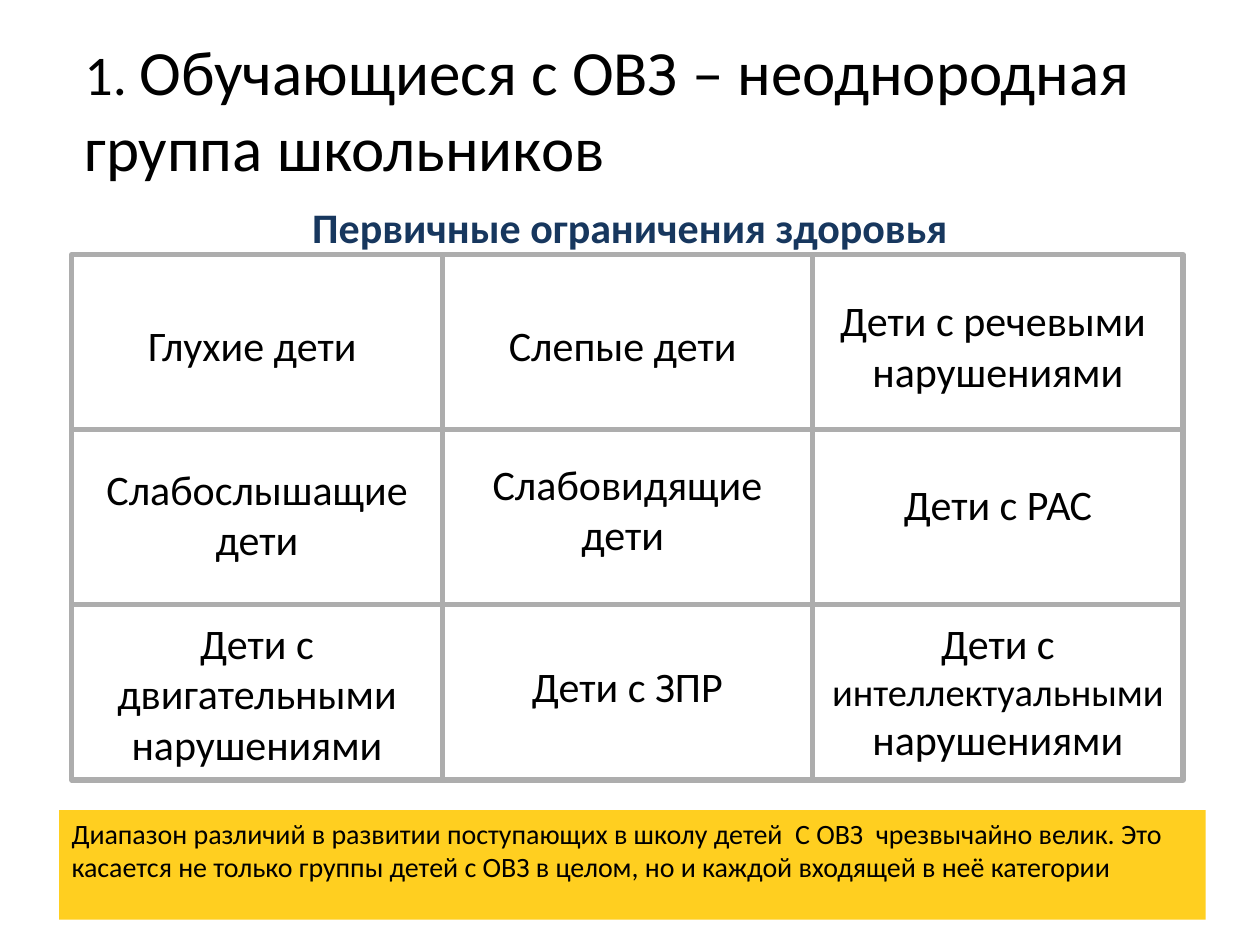
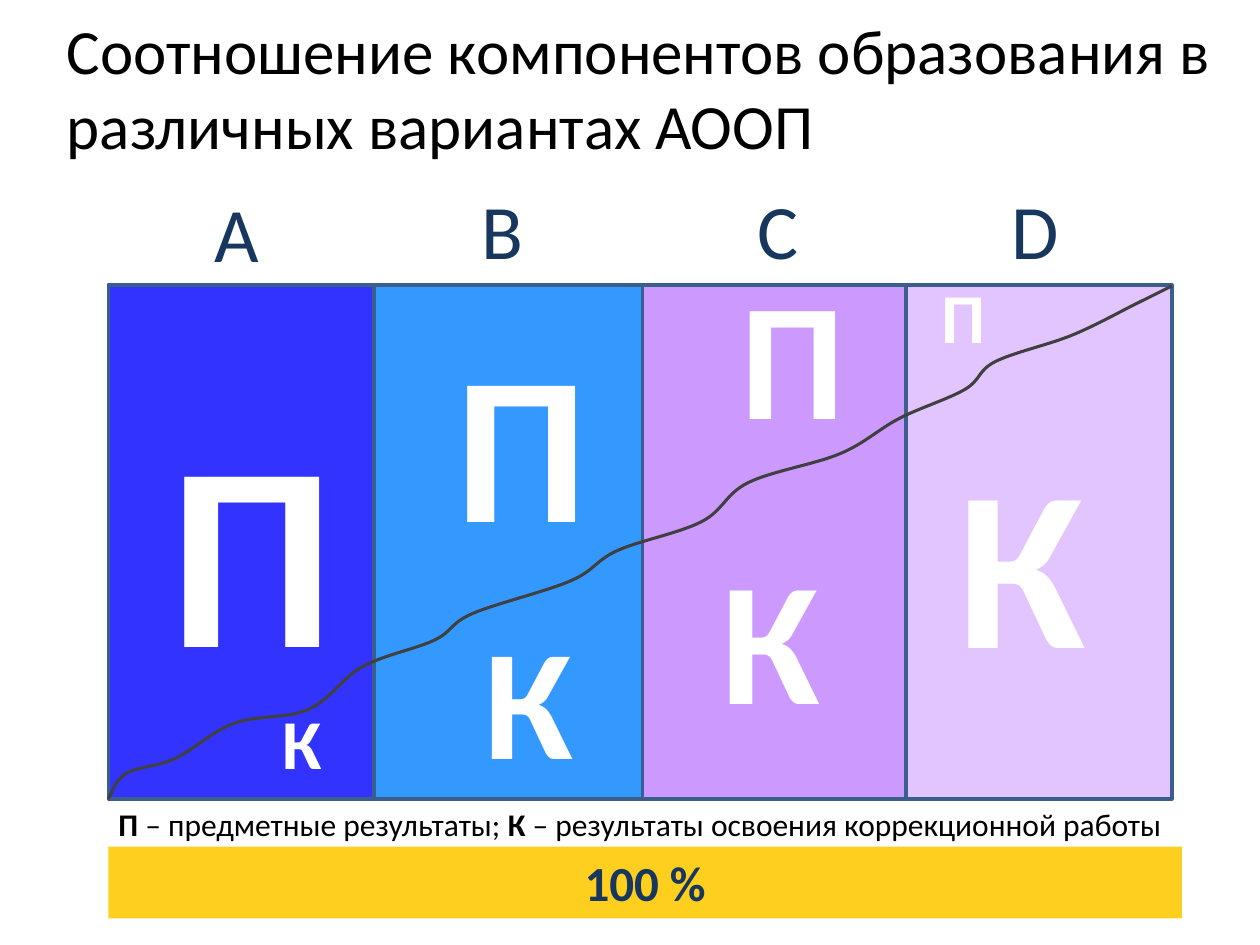
"""Build two slides on learners with special needs and their programme variants."""
from lxml import etree
from pptx import Presentation
from pptx.dml.color import RGBColor
from pptx.enum.shapes import MSO_SHAPE
from pptx.enum.text import MSO_ANCHOR, MSO_AUTO_SIZE, PP_ALIGN
from pptx.oxml.ns import qn
from pptx.util import Inches, Pt

FONT = "Calibri"
BLACK = RGBColor(0x00, 0x00, 0x00)
WHITE = RGBColor(0xFF, 0xFF, 0xFF)
NAVY = RGBColor(0x17, 0x37, 0x5E)
YELLOW = RGBColor(0xFF, 0xCF, 0x20)
GRID_GRAY = RGBColor(0xAD, 0xAD, 0xAD)
BAR_OUTLINE = RGBColor(0x3A, 0x5F, 0x8C)
CURVE_GRAY = RGBColor(0x40, 0x40, 0x40)
LEFT, CENTER = PP_ALIGN.LEFT, PP_ALIGN.CENTER
TOP, MIDDLE = MSO_ANCHOR.TOP, MSO_ANCHOR.MIDDLE
RECTANGLE = MSO_SHAPE.RECTANGLE
NO_AUTOFIT = MSO_AUTO_SIZE.NONE
TITLE_ONLY = 5

GROUPS_TITLE = [("1. ", {"size": 32}),
                ("Обучающиеся с ОВЗ – неоднородная группа школьников", {})]
GROUPS_HEADING = "Первичные ограничения здоровья"
GRID_LEFT, GRID_TOP, CELL_WIDTH, CELL_HEIGHT = 0.57, 2.02, 2.94, 1.39
GROUP_ROWS = [
    [("Глухие дети ", 2.49), ("Слепые дети ", 2.49),
     ("Дети с речевыми  нарушениями", 2.29)],
    [("Слабослышащие дети", 3.63), ("Слабовидящие дети ", 3.59),
     ("Дети с РАС", 3.75)],
    [("Дети с двигательными нарушениями", 4.85), ("Дети с ЗПР", 5.19),
     ([("Дети с ", {}), ("интеллектуальными ", {"size": 22}),
       ("нарушениями", {})], 4.85)],
]
GROUPS_NOTE = ("Диапазон различий в развитии поступающих в школу детей  С ОВЗ  "
               "чрезвычайно велик. Это касается не только группы детей с ОВЗ в целом, "
               "но и каждой входящей в неё категории")

VARIANTS_TITLE = "Соотношение компонентов образования в различных вариантах АООП"
BAR_TOP, BAR_HEIGHT = 2.26, 4.08
BAR_EDGES = [0.86, 2.97, 5.1, 7.19, 9.3]
BAR_COLORS = [RGBColor(0x33, 0x33, 0xFF), RGBColor(0x33, 0x99, 0xFF),
              RGBColor(0xCC, 0x99, 0xFF), RGBColor(0xE2, 0xC5, 0xFF)]
VARIANT_LABELS = [
    ("А ", (1.17, 1.42, 1.56, 0.84)),
    ("B ", (3.2, 1.4, 1.72, 0.84)),
    ("C", (5.16, 1.4, 2.03, 0.84)),
    ("D ", (7.27, 1.4, 2.03, 0.84)),
]
COMPONENT_LETTERS = [
    ("П", 150, (1.25, 3.01, 0.86, 2.63), LEFT),
    ("П", 120, (3.52, 2.43, 0.86, 2.12), LEFT),
    ("П", 95, (5.78, 1.96, 0.94, 1.7), LEFT),
    ("П", 40, (7.37, 2.12, 0.56, 0.77), CENTER),
    ("К", 40, (2.14, 5.5, 0.52, 0.77), CENTER),
    ("К", 90, (3.75, 4.73, 1.17, 1.62), LEFT),
    ("К", 100, (5.63, 4.15, 1.25, 1.78), LEFT),
    ("К", 130, (7.5, 3.29, 1.88, 2.29), LEFT),
]
LEGEND = [("П", {"bold": True}), (" – предметные результаты; ", {}),
          ("К ", {"bold": True}), ("– результаты освоения коррекционной работы", {})]
TOTAL = "100 %"
CURVE_KNOTS = [
    (0.86, 6.34), (1, 6.14), (1.39, 6.02), (1.86, 5.74), (2.45, 5.63),
    (2.88, 5.29), (3.45, 5.08), (3.75, 4.87), (4.53, 4.61), (4.9, 4.37),
    (5.57, 4.14), (5.94, 3.83), (6.67, 3.6), (7.14, 3.32), (7.66, 3.09),
    (7.9, 2.87), (8.51, 2.66), (9.02, 2.41), (9.3, 2.27),
]


def inches(lengths):
    return [Inches(length) for length in lengths]


def write(frame, content, size, color=BLACK, bold=False, align=LEFT, anchor=TOP):
    frame.vertical_anchor = anchor
    paragraph = frame.paragraphs[0]
    paragraph.alignment = align
    font = paragraph.font
    font.name, font.size, font.bold = FONT, Pt(size), bold
    font.color.rgb = color
    runs = [(content, {})] if isinstance(content, str) else content
    for text, changes in runs:
        run = paragraph.add_run()
        run.text = text
        if "size" in changes:
            run.font.size = Pt(changes["size"])
        if "bold" in changes:
            run.font.bold = changes["bold"]
    return paragraph


def add_text(slide, box, content, size, wrap=True, **style):
    frame = slide.shapes.add_textbox(*inches(box)).text_frame
    frame.word_wrap = wrap
    write(frame, content, size, **style)


def add_rectangle(slide, box, fill=None, outline=None, width=0):
    shape = slide.shapes.add_shape(RECTANGLE, *inches(box))
    shape.shadow.inherit = False
    if fill is None:
        shape.fill.background()
    else:
        shape.fill.solid()
        shape.fill.fore_color.rgb = fill
    if outline is None:
        shape.line.fill.background()
    else:
        shape.line.color.rgb = outline
        shape.line.width = Pt(width)
    return shape


def add_titled_slide(presentation, content, box):
    slide = presentation.slides.add_slide(presentation.slide_layouts[TITLE_ONLY])
    title = slide.shapes.title
    title.left, title.top, title.width, title.height = inches(box)
    title.text_frame.auto_size = NO_AUTOFIT
    write(title.text_frame, content, 36, anchor=MIDDLE)
    return slide


def add_smooth_curve(slide, knots, color, width):
    """Join the knots by lines, then bend each line by the Catmull-Rom rule."""
    start_knot, *other_knots = [inches(knot) for knot in knots]
    builder = slide.shapes.build_freeform(*start_knot)
    builder.add_line_segments(other_knots, close=False)
    shape = builder.convert_to_shape()
    shape.shadow.inherit = False
    shape.fill.background()
    shape.line.color.rgb = color
    shape.line.width = Pt(width)

    points = [(int(point.get("x")), int(point.get("y")))
              for point in shape.element.iter(qn("a:pt"))]
    padded = [points[0], *points, points[-1]]
    segments = list(shape.element.iter(qn("a:lnTo")))
    for segment, before, start, end, after in zip(
            segments, padded, padded[1:], padded[2:], padded[3:]):
        leaving = [s + (e - b) / 6 for s, e, b in zip(start, end, before)]
        arriving = [e - (a - s) / 6 for e, a, s in zip(end, after, start)]
        curve = etree.Element(qn("a:cubicBezTo"))
        for x, y in (leaving, arriving, end):
            etree.SubElement(curve, qn("a:pt"), x=str(round(x)), y=str(round(y)))
        segment.getparent().replace(segment, curve)


def build_groups_slide(presentation):
    slide = add_titled_slide(presentation, GROUPS_TITLE, (0.57, 0.46, 9.43, 1.08))
    slide.shapes.title.text_frame.margin_bottom = Inches(0.33)
    for row, groups in enumerate(GROUP_ROWS):
        for column, (group, text_top) in enumerate(groups):
            left = GRID_LEFT + column * CELL_WIDTH
            top = GRID_TOP + row * CELL_HEIGHT
            add_rectangle(slide, (left, top, CELL_WIDTH, CELL_HEIGHT),
                          outline=GRID_GRAY, width=3)
            add_text(slide, (left, text_top, CELL_WIDTH, 0.5), group, 24, align=CENTER)
    note = add_rectangle(slide, (0.47, 6.43, 9.1, 0.87), fill=YELLOW)
    paragraph = write(note.text_frame, GROUPS_NOTE, 16)
    paragraph.space_before = paragraph.space_after = Pt(12)
    add_text(slide, (2.38, 1.55, 5.3, 0.5), GROUPS_HEADING, 24, wrap=False,
             color=NAVY, bold=True)


def build_variants_slide(presentation):
    slide = add_titled_slide(presentation, VARIANTS_TITLE, (0.43, 0.15, 9.57, 1.08))
    for left, right, color in zip(BAR_EDGES, BAR_EDGES[1:], BAR_COLORS):
        add_rectangle(slide, (left, BAR_TOP, right - left, BAR_HEIGHT),
                      fill=color, outline=BAR_OUTLINE, width=2)
    for letter, size, box, align in COMPONENT_LETTERS:
        add_text(slide, box, letter, size, color=WHITE, bold=True, align=align)
    add_text(slide, (0.16, 6.34, 9.84, 0.4), LEGEND, 18, align=CENTER)
    for label, box in VARIANT_LABELS:
        add_text(slide, box, label, 44, color=NAVY, align=CENTER)
    total = add_rectangle(slide, (0.86, 6.72, 8.52, 0.57), fill=YELLOW)
    write(total.text_frame, TOTAL, 28, color=NAVY, bold=True, align=CENTER)
    add_smooth_curve(slide, CURVE_KNOTS, CURVE_GRAY, 1.75)


def main():
    presentation = Presentation()
    presentation.slide_width, presentation.slide_height = Inches(10), Inches(7.5)
    build_groups_slide(presentation)
    build_variants_slide(presentation)
    presentation.save("out.pptx")


if __name__ == "__main__":
    main()
